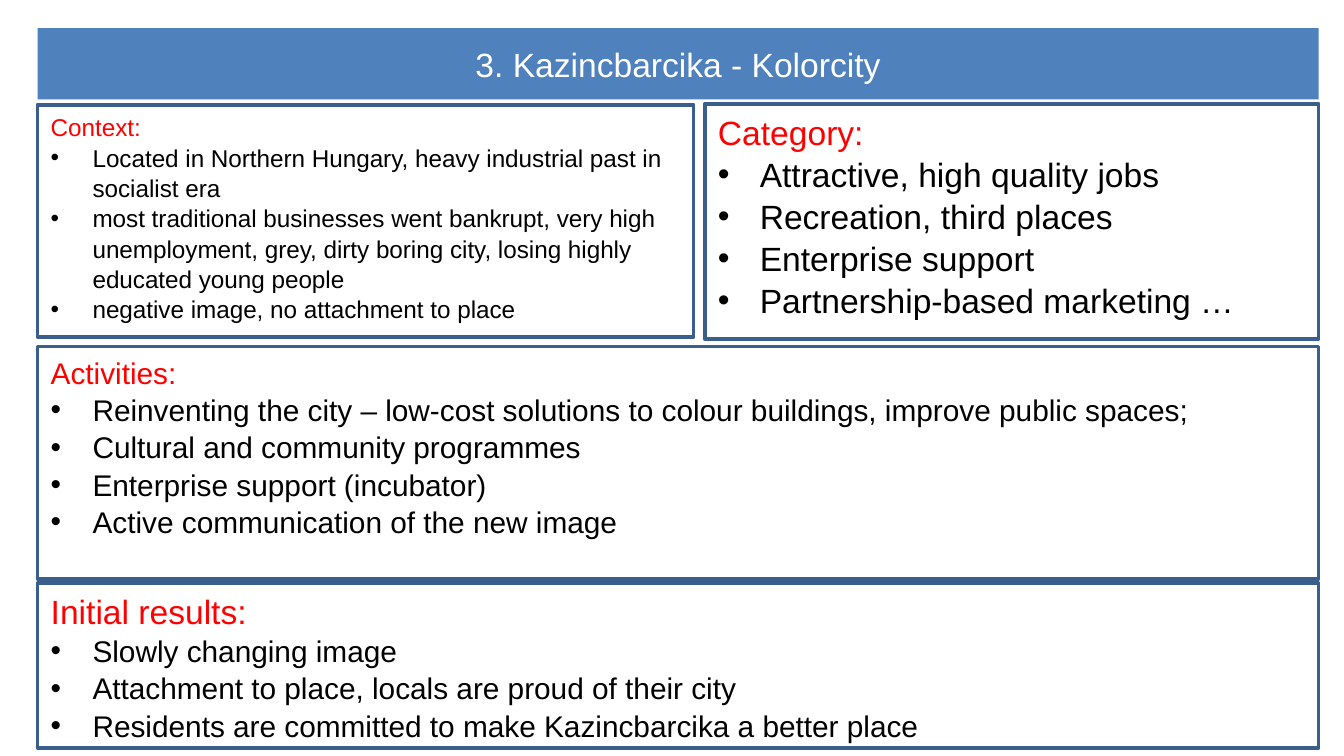
from dataclasses import dataclass

from lxml import etree
from pptx import Presentation
from pptx import util as u
from pptx.dml.color import RGBColor
from pptx.enum import shapes, text
from pptx.oxml import ns


@dataclass(frozen=True)
class Theme:
    """Colours, type sizes and measures of the slide."""
    font: str = "Arial"
    bar: str = "4F81BD"
    border: str = "3A5F8C"
    paper: str = "FFFFFF"
    heading: str = "FF0000"
    body: str = "000000"
    large: int = 18
    medium: int = 16
    small: int = 13
    border_width: int = 2
    line_spacing: float = 1.04
    indent: float = 0.79


THEME = Theme()
LEFT, WIDTH, GAP = 0.71, 24.21, 0.21
CONTEXT_WIDTH = 12.4
CATEGORY_LEFT = LEFT + CONTEXT_WIDTH + GAP
CATEGORY_WIDTH = LEFT + WIDTH - CATEGORY_LEFT

PANELS = [
    ((LEFT, 1.98, CONTEXT_WIDTH, 4.39), "Context:", THEME.small, THEME.small, [
        "Located in Northern Hungary, heavy industrial past in socialist era",
        "most traditional businesses went bankrupt, very high unemployment, "
        "grey, dirty boring city, losing highly educated young people",
        "negative image, no attachment to place",
    ]),
    ((CATEGORY_LEFT, 1.96, CATEGORY_WIDTH, 4.45), "Category:", THEME.large, THEME.large, [
        "Attractive, high quality jobs",
        "Recreation, third places",
        "Enterprise support",
        "Partnership-based marketing …",
    ]),
    ((LEFT, 6.55, WIDTH, 4.39), "Activities:", THEME.medium, THEME.medium, [
        "Reinventing the city – low-cost solutions to colour buildings, improve public spaces;",
        "Cultural and community programmes",
        "Enterprise support (incubator)",
        "Active communication of the new image",
    ]),
    ((LEFT, 11.02, WIDTH, 3.12), "Initial results:", THEME.large, THEME.medium, [
        "Slowly changing image",
        "Attachment to place, locals are proud of their city",
        "Residents are committed to make Kazincbarcika a better place",
    ]),
]


def apply(obj, **values):
    """Set each given format value on an object."""
    for name, value in values.items():
        setattr(obj, name, value)


def fill(s, colour):
    """Give a shape a solid fill."""
    s.fill.solid()
    s.fill.fore_color.rgb = RGBColor.from_string(colour)


def write(p, words, size, colour, **layout):
    """Write one run of text into a paragraph."""
    apply(p, **layout)
    r = p.add_run()
    r.text = words
    apply(r.font, name=THEME.font, size=u.Pt(size))
    r.font.color.rgb = RGBColor.from_string(colour)


def add_bullet(p):
    """Give a paragraph a hanging round bullet."""
    pPr = p._p.get_or_add_pPr()
    indent = u.Cm(THEME.indent)
    pPr.set("marL", str(indent))
    pPr.set("indent", str(-indent))
    etree.SubElement(pPr, ns.qn("a:buFont"), typeface=THEME.font)
    etree.SubElement(pPr, ns.qn("a:buChar"), char="•")


def place_title(s, box, words):
    """Turn the title placeholder into the coloured bar."""
    apply(s, **dict(zip(("left", "top", "width", "height"), map(u.Cm, box))))
    fill(s, THEME.bar)
    tf = s.text_frame
    apply(tf, word_wrap=True, auto_size=text.MSO_AUTO_SIZE.NONE,
          vertical_anchor=text.MSO_ANCHOR.MIDDLE)
    write(tf.paragraphs[0], words, THEME.large, THEME.paper,
          alignment=text.PP_ALIGN.CENTER)


def add_panel(slide, box, heading, heading_size, size, items):
    """Add a bordered panel with a heading and bullets."""
    s = slide.shapes.add_shape(shapes.MSO_SHAPE.RECTANGLE, *map(u.Cm, box))
    s.shadow.inherit = False
    fill(s, THEME.paper)
    s.line.color.rgb = RGBColor.from_string(THEME.border)
    s.line.width = u.Pt(THEME.border_width)
    tf = s.text_frame
    apply(tf, word_wrap=True, vertical_anchor=text.MSO_ANCHOR.TOP)
    layout = dict(alignment=text.PP_ALIGN.LEFT, line_spacing=THEME.line_spacing)
    write(tf.paragraphs[0], heading, heading_size, THEME.heading, **layout)
    for item in items:
        p = tf.add_paragraph()
        add_bullet(p)
        write(p, item, size, THEME.body, **layout)


def main():
    """Build and save the slide."""
    prs = Presentation()
    apply(prs, slide_width=u.Cm(25.4), slide_height=u.Cm(14.29))
    slide = prs.slides.add_slide(prs.slide_layouts.get_by_name("Title Only"))
    place_title(slide.shapes.title, (LEFT, 0.53, WIDTH, 1.35), "3. Kazincbarcika - Kolorcity")
    for panel in PANELS:
        add_panel(slide, *panel)
    prs.save("out.pptx")


if __name__ == "__main__":
    main()
